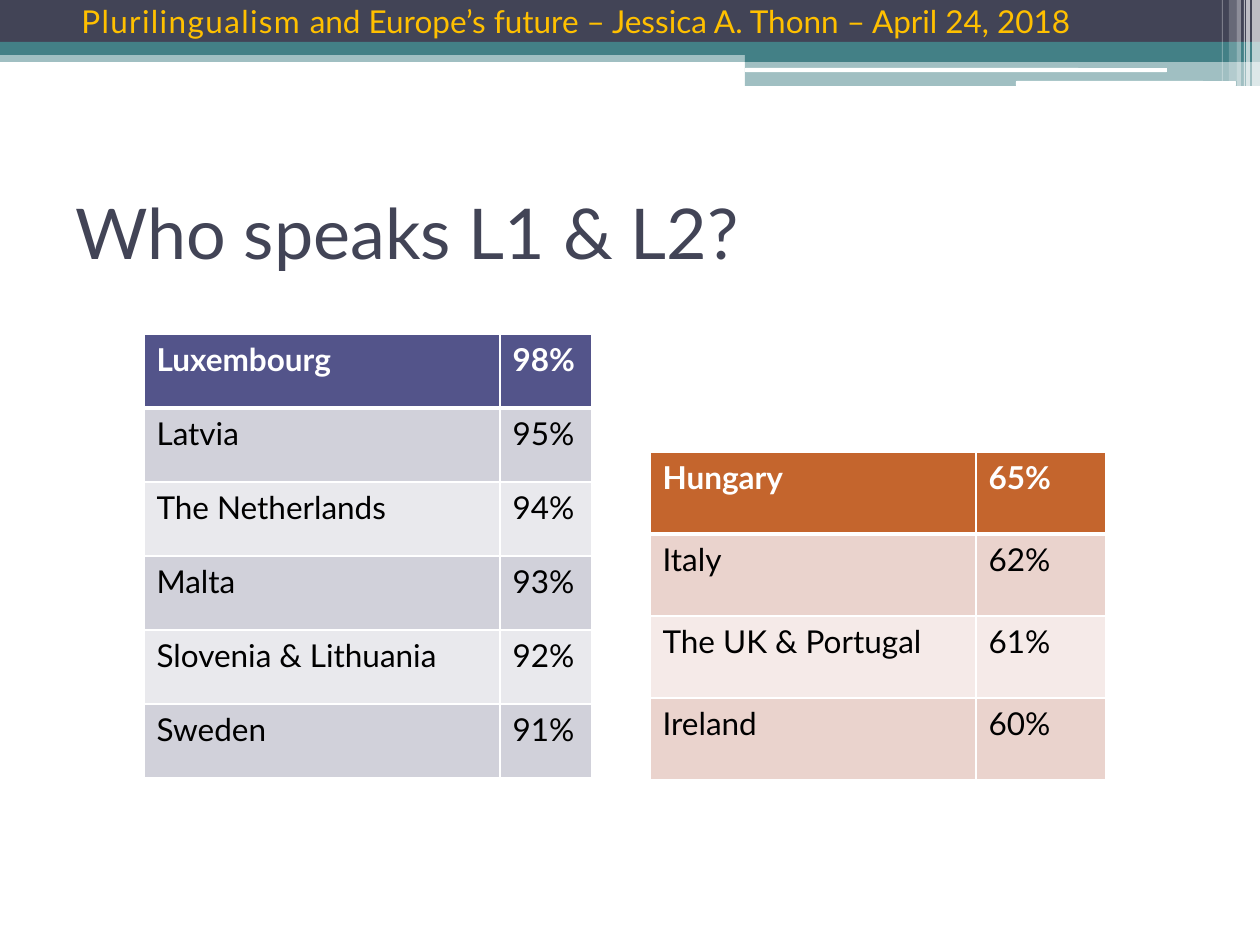
from dataclasses import dataclass

from lxml import etree
from pptx import Presentation
from pptx.dml.color import RGBColor
from pptx.enum import shapes, text
from pptx.oxml import ns
from pptx.util import Pt

EMU_PER_PX = 914400 / 126
FONT = "Lato"

WHITE = RGBColor(0xFF, 0xFF, 0xFF)
BLACK = RGBColor(0x00, 0x00, 0x00)
SLATE = RGBColor(0x42, 0x44, 0x56)
TEAL = RGBColor(0x43, 0x80, 0x86)
GOLD = RGBColor(0xFF, 0xC0, 0x00)
INDIGO = RGBColor(0x53, 0x54, 0x8A)
LAVENDER = RGBColor(0xD1, 0xD1, 0xDA)
PALE_LAVENDER = RGBColor(0xE9, 0xE9, 0xED)
RUST = RGBColor(0xC4, 0x65, 0x2D)
BLUSH = RGBColor(0xEA, 0xD3, 0xCD)
PALE_BLUSH = RGBColor(0xF5, 0xEA, 0xE8)


@dataclass(frozen=True)
class Bar:
    left: int
    top: int
    width: int
    height: int
    color: RGBColor
    opacity: int = 100
    rounded: bool = False


@dataclass(frozen=True)
class LanguageTable:
    left: int
    top: int
    columns: tuple[int, int]
    row_height: int
    header: RGBColor
    bands: tuple[RGBColor, RGBColor]
    rows: tuple[tuple[str, str], ...]


BANNER = (
    Bar(0, 50, 1260, 12, TEAL, 50),
    Bar(0, 0, 1260, 42, SLATE),
    Bar(0, 42, 1260, 13, TEAL),
    Bar(745, 49, 515, 13, TEAL),
    Bar(745, 61, 515, 25, TEAL, 50),
    Bar(745, 68, 422, 4, WHITE, rounded=True),
    Bar(1016, 81, 220, 5, WHITE, rounded=True),
    Bar(1252, 0, 8, 86, WHITE, 65),
    Bar(1246, 0, 4, 86, WHITE, 65),
    Bar(1244, 0, 1, 86, WHITE, 60),
    Bar(1237, 0, 4, 86, WHITE, 40),
    Bar(1229, 0, 8, 81, WHITE, 20),
    Bar(1222, 0, 1, 81, WHITE, 30),
)

TABLES = (
    LanguageTable(
        144, 334, (356, 92), 74, INDIGO, (LAVENDER, PALE_LAVENDER),
        (
            ("Luxembourg", "98%"),
            ("Latvia", "95%"),
            ("The Netherlands", "94%"),
            ("Malta", "93%"),
            ("Slovenia & Lithuania", "92%"),
            ("Sweden", "91%"),
        ),
    ),
    LanguageTable(
        650, 452, (326, 130), 82, RUST, (BLUSH, PALE_BLUSH),
        (
            ("Hungary", "65%"),
            ("Italy", "62%"),
            ("The UK & Portugal", "61%"),
            ("Ireland", "60%"),
        ),
    ),
)


def px(length: int) -> int:
    return round(length * EMU_PER_PX)


def draw_bar(slide, bar: Bar) -> None:
    preset = shapes.MSO_SHAPE.ROUNDED_RECTANGLE if bar.rounded else shapes.MSO_SHAPE.RECTANGLE
    shape = slide.shapes.add_shape(preset, px(bar.left), px(bar.top), px(bar.width), px(bar.height))
    shape.shadow.inherit = False
    shape.line.fill.background()
    shape.fill.solid()
    shape.fill.fore_color.rgb = bar.color
    if bar.opacity < 100:
        color = shape.fill._xPr.find(".//" + ns.qn("a:srgbClr"))
        etree.SubElement(color, ns.qn("a:alpha"), val=str(bar.opacity * 1000))


def style(paragraph, size: int, color: RGBColor, bold: bool = False) -> None:
    font = paragraph.font
    font.name, font.size, font.bold = FONT, Pt(size), bold
    font.color.rgb = color


def add_text_frame(slide, left: int, top: int, width: int, height: int):
    frame = slide.shapes.add_textbox(px(left), px(top), px(width), px(height)).text_frame
    frame.word_wrap = True
    return frame


def draw_running_head(slide) -> None:
    head = add_text_frame(slide, 54, -4, 1134, 57).paragraphs[0]
    style(head, 18, GOLD)
    head.space_before = Pt(3)
    head._p.get_or_add_pPr().set("marL", str(px(15)))
    topic = head.add_run()
    topic.text = "Plurilingualism"
    topic._r.get_or_add_rPr().set("spc", "80")
    head.add_run().text = " and Europe’s future – Jessica A. Thonn – April 24, 2018"


def draw_title(slide) -> None:
    frame = add_text_frame(slide, 63, 158, 1134, 147)
    frame.vertical_anchor = text.MSO_ANCHOR.MIDDLE
    frame.text = "Who speaks L1 & L2?"
    style(frame.paragraphs[0], 40, SLATE)


def add_borders(cell, row: int) -> None:
    """White rules, thicker between the header and the first body row."""
    properties = cell._tc.get_or_add_tcPr()
    widths = {"L": 1, "R": 1, "T": 3 if row == 1 else 1, "B": 3 if row == 0 else 1}
    for side, width in widths.items():
        line = etree.SubElement(properties, ns.qn(f"a:ln{side}"), w=str(Pt(width)))
        fill = etree.SubElement(line, ns.qn("a:solidFill"))
        etree.SubElement(fill, ns.qn("a:srgbClr"), val=str(WHITE))


def draw_table(slide, spec_table: LanguageTable) -> None:
    count = len(spec_table.rows)
    table = slide.shapes.add_table(
        count, len(spec_table.columns), px(spec_table.left), px(spec_table.top),
        px(sum(spec_table.columns)), px(spec_table.row_height * count),
    ).table
    for column, width in zip(table.columns, spec_table.columns):
        column.width = px(width)
    for r, values in enumerate(spec_table.rows):
        is_header = r == 0
        for c, value in enumerate(values):
            cell = table.cell(r, c)
            add_borders(cell, r)
            cell.fill.solid()
            cell.fill.fore_color.rgb = spec_table.header if is_header else spec_table.bands[(r - 1) % 2]
            cell.text = value
            style(cell.text_frame.paragraphs[0], 18, WHITE if is_header else BLACK, is_header)


def main() -> None:
    deck = Presentation()
    deck.slide_width, deck.slide_height = px(1260), px(945)
    slide = deck.slides.add_slide(deck.slide_layouts[6])
    for bar in BANNER:
        draw_bar(slide, bar)
    draw_title(slide)
    draw_running_head(slide)
    for language_table in TABLES:
        draw_table(slide, language_table)
    deck.save("out.pptx")


if __name__ == "__main__":
    main()
